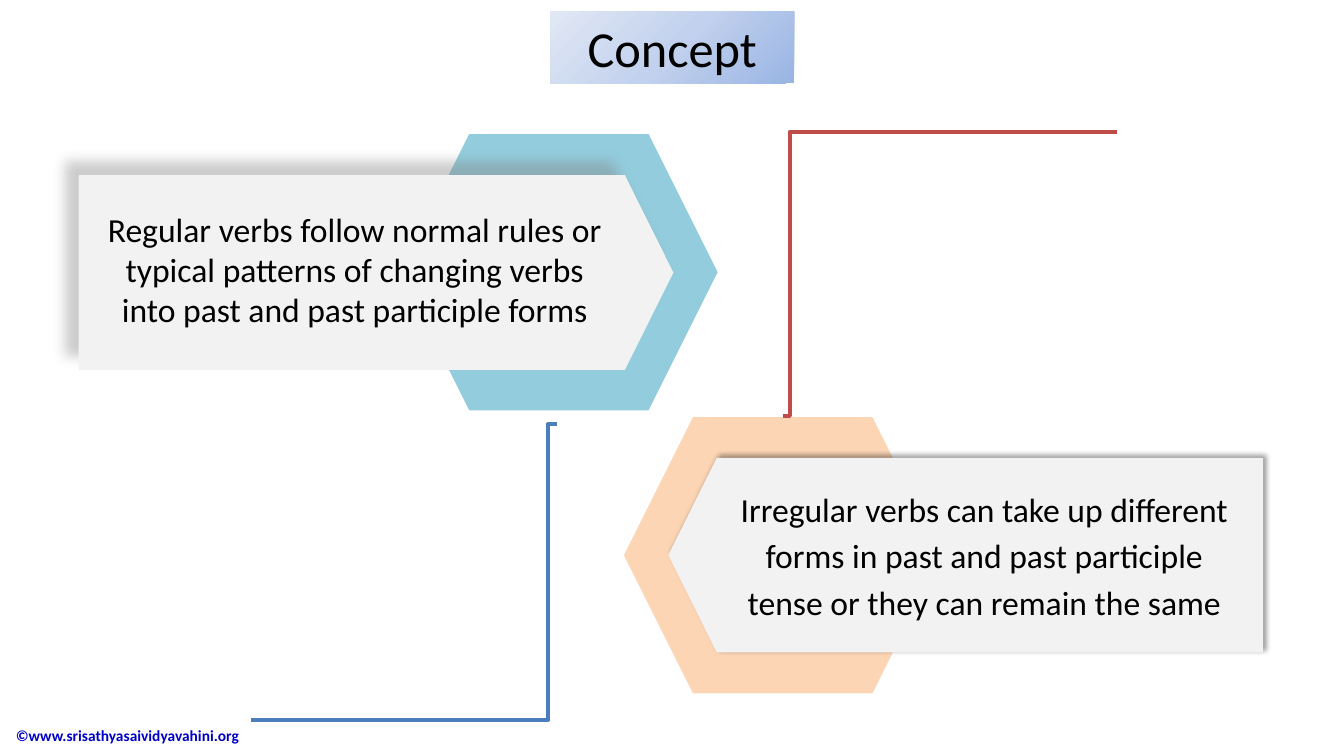
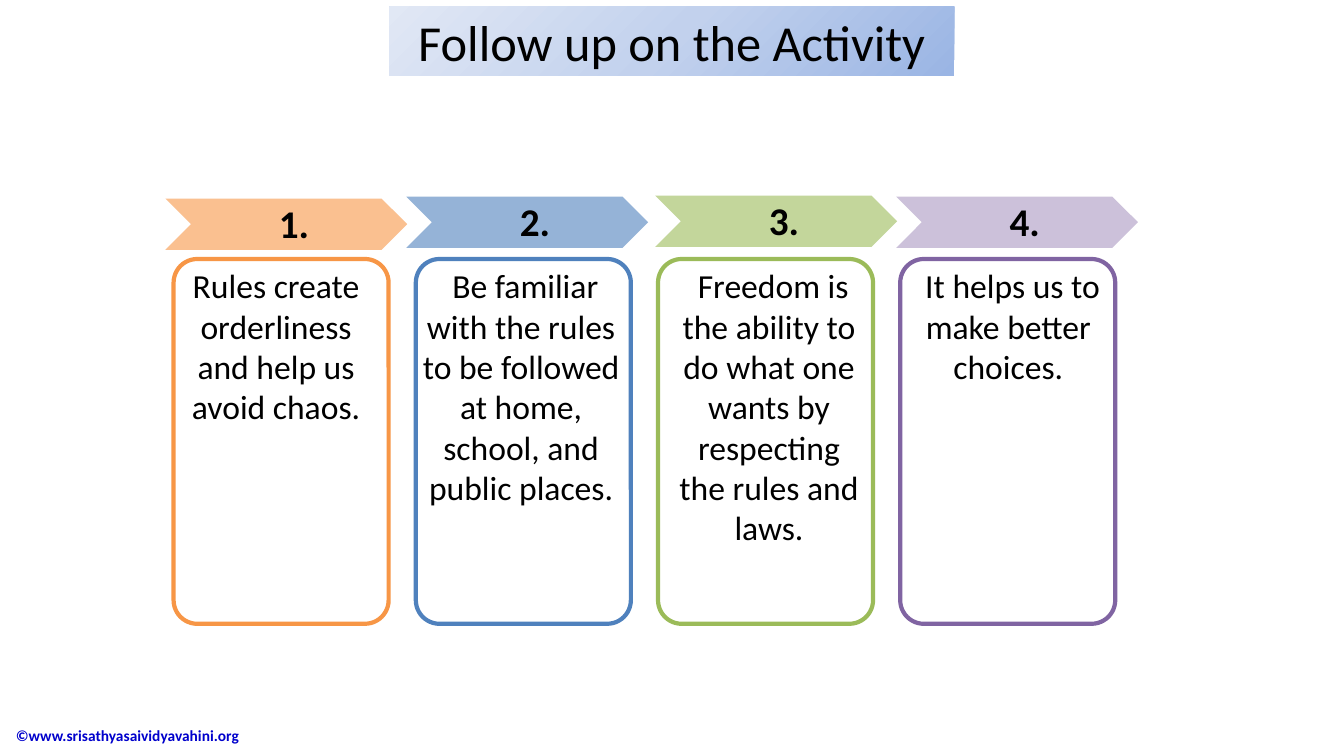
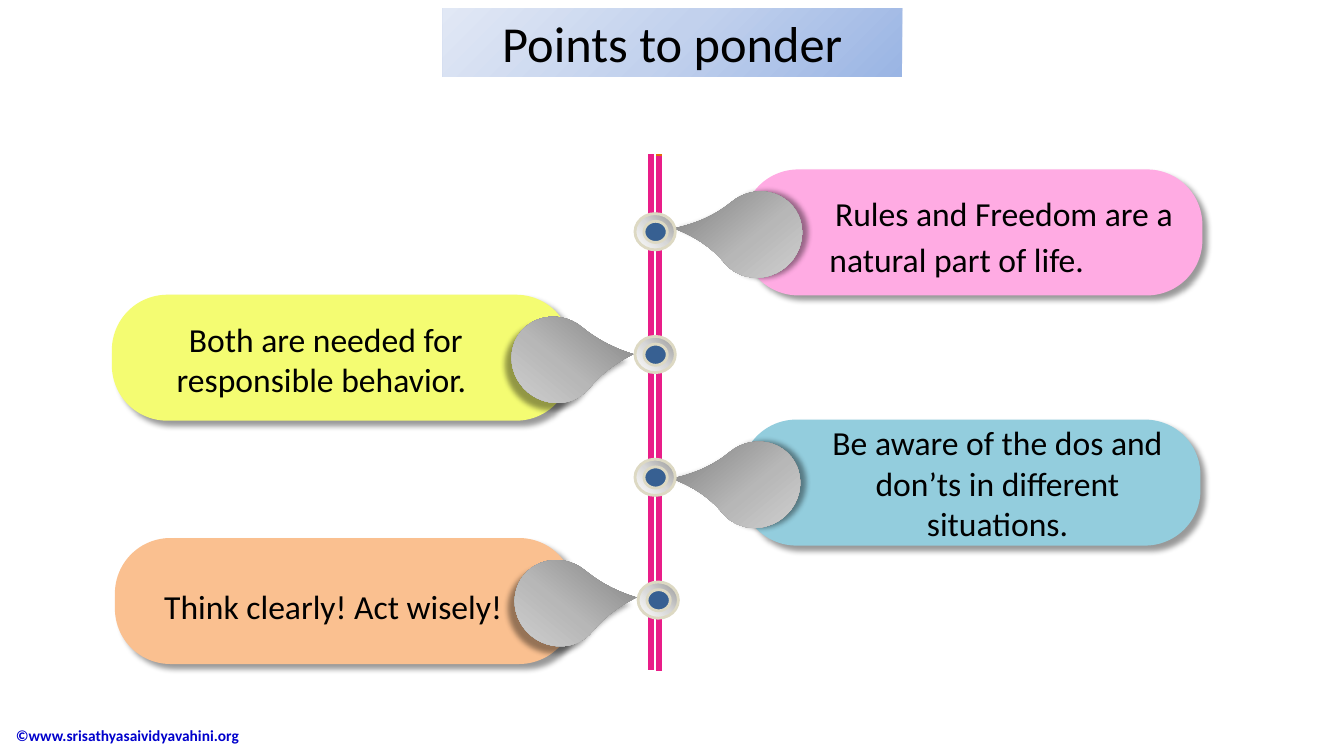
from lxml import etree
from pptx import Presentation
from pptx.dml.color import RGBColor
from pptx.enum.shapes import MSO_CONNECTOR, MSO_SHAPE
from pptx.enum.text import MSO_ANCHOR, MSO_AUTO_SIZE, PP_ALIGN
from pptx.oxml.ns import qn
from pptx.util import Pt

HEXAGON = MSO_SHAPE.HEXAGON
CHEVRON = MSO_SHAPE.CHEVRON
ROUNDED = MSO_SHAPE.ROUNDED_RECTANGLE
TEARDROP = MSO_SHAPE.TEAR
OVAL = MSO_SHAPE.OVAL
STRAIGHT = MSO_CONNECTOR.STRAIGHT
ELBOW = MSO_CONNECTOR.ELBOW
LEFT = PP_ALIGN.LEFT
CENTER = PP_ALIGN.CENTER
MIDDLE = MSO_ANCHOR.MIDDLE
TOP = MSO_ANCHOR.TOP
NO_FIT = MSO_AUTO_SIZE.NONE

FONT = "Calibri"
COLORS = {
    "ink": "000000", "footer": "0000CC", "white": "FFFFFF", "panel": "F2F2F2",
    "gray": "808080", "sky": "93CDDD", "peach": "FCD5B5", "blue_line": "4B7EBC",
    "red_line": "BF4C48", "orange": "F79646", "orange_light": "FAC090",
    "blue": "4F81BD", "blue_light": "95B3D7", "green": "9BBB59",
    "green_light": "C3D69B", "purple": "8064A2", "purple_light": "CCC1DA",
    "magenta": "E91D88", "rust": "E46C0A", "pink": "FFABE3", "yellow": "F4FC72",
    "navy": "376092", "sand": "DDD9C3",
}
TITLE_GRADIENT = (("9AB5E4", "C2D1ED", "E1E8F5"), 225)
DROP_GRADIENT = (("808080", "B7B7B7", "D9D9D9"), 180)
RING_GRADIENT = (("979797", "D7D7D7", "FFFFFF"), 135)


def rgb(name):
    return RGBColor.from_string(COLORS[name])


class Deck:
    def __init__(self):
        self.presentation = Presentation()
        self.presentation.slide_width = Pt(960)
        self.presentation.slide_height = Pt(540)
        self.slide = None

    def new_slide(self, heading, left, top, width, height):
        layout = self.presentation.slide_layouts[5]
        self.slide = self.presentation.slides.add_slide(layout)
        title = self.slide.shapes.title
        self.place(title, left, top, width, height)
        self.gradient(title, *TITLE_GRADIENT)
        self.set_text(title, heading, 36, anchor=MIDDLE)
        self.text("©www.srisathyasaividyavahini.org", 4.2, 511.2, 246, 28.8,
                  size=11, color="footer", bold=True, align=LEFT, anchor=MIDDLE)

    def place(self, shape, left, top, width, height):
        shape.left, shape.top = Pt(left), Pt(top)
        shape.width, shape.height = Pt(width), Pt(height)

    def set_text(self, shape, words, size, color="ink", bold=False, align=CENTER,
                 anchor=TOP, spacing=1.0, indent=0):
        frame = shape.text_frame
        frame.text = words
        frame.word_wrap = True
        frame.auto_size = NO_FIT
        frame.vertical_anchor = anchor
        paragraph = frame.paragraphs[0]
        paragraph.alignment = align
        paragraph.line_spacing = spacing
        if indent:
            paragraph._p.get_or_add_pPr().set("indent", str(Pt(indent)))
        for run in paragraph.runs:
            run.font.name = FONT
            run.font.size = Pt(size)
            run.font.bold = bold
            run.font.color.rgb = rgb(color)

    def text(self, words, left, top, width, height, size=24, **style):
        box = self.slide.shapes.add_textbox(Pt(left), Pt(top), Pt(width), Pt(height))
        self.set_text(box, words, size, **style)

    def gradient(self, shape, stops, angle):
        shape.fill.gradient()
        fill = shape._element.spPr.find(qn("a:gradFill"))
        stop_list = fill.find(qn("a:gsLst"))
        for stop in list(stop_list):
            stop_list.remove(stop)
        for index, color in enumerate(stops):
            stop = etree.SubElement(stop_list, qn("a:gs"), pos=str(index * 50000))
            etree.SubElement(stop, qn("a:srgbClr"), val=color)
        fill.find(qn("a:lin")).set("ang", str(angle * 60000))

    def finish(self, shape, fill, line=None, line_width=3, shadow=None):
        if isinstance(fill, tuple):
            self.gradient(shape, *fill)
        else:
            shape.fill.solid()
            shape.fill.fore_color.rgb = rgb(fill)
        if line:
            shape.line.color.rgb = rgb(line)
            shape.line.width = Pt(line_width)
        else:
            shape.line.fill.background()
        shape.shadow.inherit = False
        if shadow:
            color, blur, distance, direction = shadow
            effects = shape._element.spPr.find(qn("a:effectLst"))
            outer = etree.SubElement(
                effects, qn("a:outerShdw"), blurRad=str(Pt(blur)),
                dist=str(Pt(distance)), dir=str(direction * 60000),
                algn="ctr", rotWithShape="0")
            tint = etree.SubElement(outer, qn("a:srgbClr"), val=COLORS[color])
            etree.SubElement(tint, qn("a:alpha"), val="40000")

    def shape(self, kind, left, top, width, height, fill, adjust=None,
              rotation=0, flip=False, **style):
        shape = self.slide.shapes.add_shape(kind, Pt(left), Pt(top), Pt(width), Pt(height))
        if adjust is not None:
            shape.adjustments[0] = adjust
        shape.rotation = rotation
        if flip:
            shape._element.spPr.xfrm.set("flipH", "1")
        self.finish(shape, fill, **style)

    def panel(self, flat, tip, top, height, shadow):
        shoulder = tip + (-34.6 if tip > flat else 34.6)
        outline = [(shoulder, top), (tip, top + height / 2),
                   (shoulder, top + height), (flat, top + height)]
        builder = self.slide.shapes.build_freeform(Pt(flat), Pt(top))
        builder.add_line_segments([(Pt(x), Pt(y)) for x, y in outline], close=True)
        self.finish(builder.convert_to_shape(), "panel", shadow=shadow)

    def line(self, start, end, color, width, kind=STRAIGHT, bend=None):
        line = self.slide.shapes.add_connector(
            kind, *(Pt(value) for value in (*start, *end)))
        line.line.color.rgb = rgb(color)
        line.line.width = Pt(width)
        properties = line._element.spPr
        if bend is not None:
            geometry = properties.find(qn("a:prstGeom"))
            guides = geometry.find(qn("a:avLst"))
            if guides is None:
                guides = etree.SubElement(geometry, qn("a:avLst"))
            etree.SubElement(guides, qn("a:gd"), name="adj1",
                             fmla=f"val {round(bend * 100000)}")
        etree.SubElement(properties, qn("a:effectLst"))


def concept(deck):
    deck.new_slide("Concept", 393.1, 8.4, 174.2, 51.1)
    deck.shape(HEXAGON, 285.8, 95.8, 226.8, 197.3, "sky")
    deck.panel(56.2, 481, 125.2, 139, ("gray", 9, 14, 225))
    deck.shape(HEXAGON, 445.7, 298, 226.8, 197.3, "peach")
    deck.panel(902.2, 477.4, 327, 139, ("ink", 4, 3, 315))
    deck.text("Irregular verbs can take up different forms in past and past "
              "participle tense or they can remain the same",
              514.8, 341.3, 376.6, 104.4, spacing=1.15)
    deck.text("Regular verbs follow normal rules or typical patterns of changing "
              "verbs into past and past participle forms",
              66.2, 145.4, 374.4, 94.3)
    deck.line((398.2, 303.1), (179.3, 514.1), "blue_line", 3, ELBOW, 0.03)
    deck.line((797.8, 94.3), (559.4, 297), "red_line", 3, ELBOW, 0.98)


def follow_up(deck):
    deck.new_slide("Follow up on the Activity", 277.9, 5, 403.9, 49)
    steps = [
        ("orange", 118.1, 141.8, 120.2, 154, 0,
         "Rules create orderliness and help us avoid chaos."),
        ("blue", 290.2, 140.4, 294.5, 155.5, 6,
         "Be familiar with the rules to be followed at home, school, and public places."),
        ("green", 468, 139.7, 473, 152.6, 6,
         "Freedom is the ability to do what one wants by respecting the rules and laws."),
        ("purple", 640.1, 140.4, 642.2, 156.2, 6,
         "It helps us to make better choices."),
    ]
    for index, (color, arrow_left, arrow_top, left, width, indent, words) in enumerate(steps):
        deck.shape(ROUNDED, 124 + 173 * index, 185, 153.6, 260.6, "white",
                   adjust=0.11, line=color)
        deck.text(words, left, 186, width, 211, indent=indent)
        deck.shape(CHEVRON, arrow_left, arrow_top, 172.8, 36.7, color + "_light")
        deck.text(f"{index + 1}.", arrow_left + 25, arrow_top - 2.8, 133.9, 41,
                  size=28, bold=True)


def points_to_ponder(deck):
    deck.new_slide("Points to ponder", 316.1, 5.8, 328.3, 49)
    for x, top, color in ((470.9, 110.2, "rust"), (465.1, 110.2, "magenta"),
                          (470.9, 111.2, "magenta")):
        deck.line((x, top), (x, top + 368.4), color, 4.5)
    points = [
        ("pink", 530.6, 121, 453.6, (585.4, 130.3, 275.8, 72),
         "Rules and Freedom are a natural part of life.",
         {"align": LEFT, "spacing": 1.14, "indent": 4}),
        ("yellow", 79.9, 210.5, 453.6, (78.5, 223.9, 302.4, 65.5),
         "Both are needed for responsible behavior.", {"indent": 6}),
        ("sky", 529.2, 299.7, 453.6, (581.8, 298.1, 261.4, 94.3),
         "Be aware of the dos and don’ts in different situations.", {}),
        ("orange_light", 82.1, 384.3, 455.8, (103, 413.3, 270, 36.7),
         "Think clearly! Act wisely!", {"spacing": 1.07}),
    ]
    right_drop = {"adjust": 1.39, "rotation": 230.5, "shadow": ("ink", 4, 4, 0)}
    left_drop = {"adjust": 1.28, "rotation": 129.5, "flip": True,
                 "shadow": ("ink", 4, 7, 135)}
    for index, (color, left, top, ring_left, text_area, words, style) in enumerate(points):
        offset, drop = (286.4, left_drop) if index % 2 else (-19, right_drop)
        ring_top = 152.6 + 87.7 * index
        deck.shape(ROUNDED, left, top, 328.3, 90, color, adjust=0.44,
                   shadow=("ink", 4, 5, 45))
        deck.shape(TEARDROP, left + offset, top + 14.8, 60.5, 63.4, DROP_GRADIENT, **drop)
        deck.shape(OVAL, ring_left, ring_top, 28.8, 25.9, RING_GRADIENT,
                   line="sand", line_width=2)
        deck.shape(OVAL, ring_left + 6.4, ring_top + 5.5, 16.6, 15.1, "navy",
                   line="sand", line_width=2)
        deck.text(words, *text_area, **style)


def main():
    deck = Deck()
    concept(deck)
    follow_up(deck)
    points_to_ponder(deck)
    deck.presentation.save("out.pptx")


if __name__ == "__main__":
    main()
